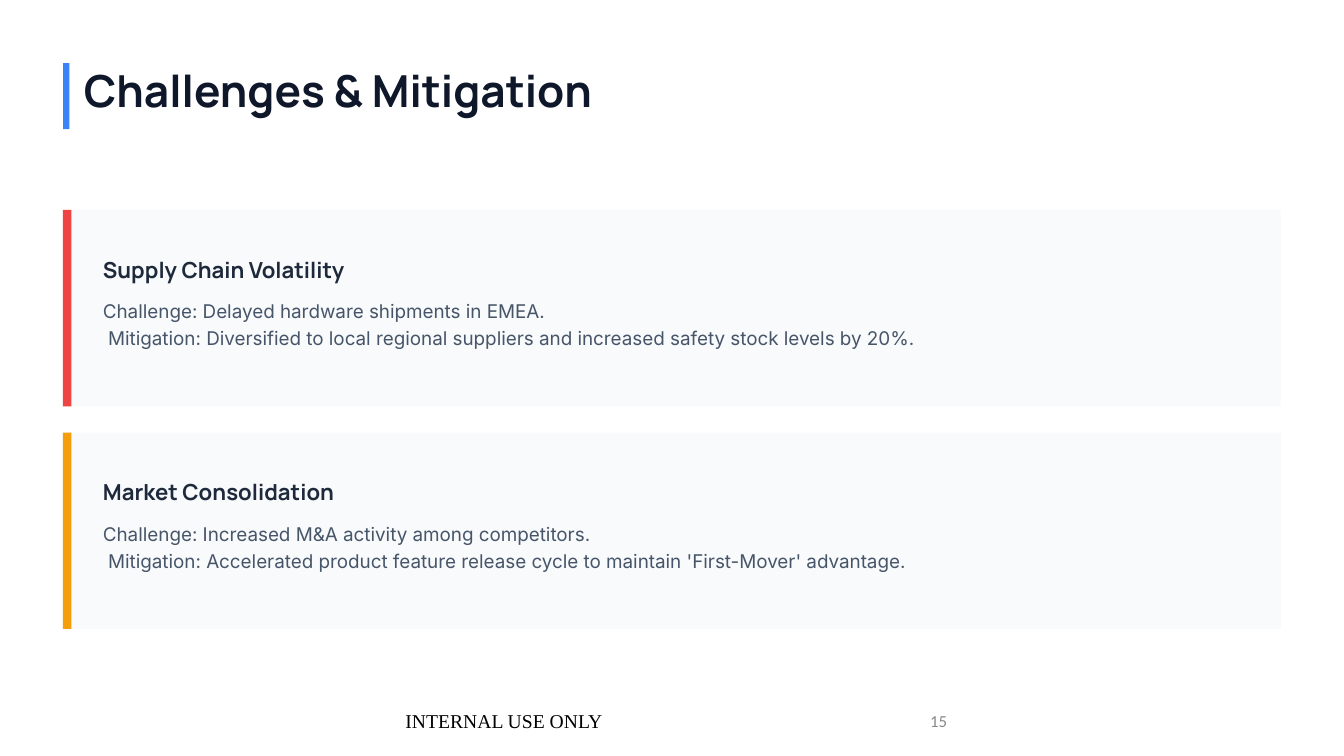
from pptx import Presentation
from pptx.dml.color import RGBColor
from pptx.enum.shapes import MSO_SHAPE
from pptx.enum.text import MSO_ANCHOR, MSO_AUTO_SIZE, PP_ALIGN
from pptx.util import Emu, Pt

EMU_PER_PX = 9525

WHITE = RGBColor(0xFF, 0xFF, 0xFF)
BLACK = RGBColor(0x00, 0x00, 0x00)
NAVY = RGBColor(0x0F, 0x17, 0x2A)
HEADING = RGBColor(0x1E, 0x29, 0x3B)
BODY = RGBColor(0x47, 0x55, 0x69)
GREY = RGBColor(0x88, 0x88, 0x88)
PANEL = RGBColor(0xF8, 0xFA, 0xFC)
BLUE = RGBColor(0x3B, 0x82, 0xF6)
RED = RGBColor(0xEF, 0x44, 0x44)
AMBER = RGBColor(0xF5, 0x9E, 0x0B)

MARGIN = 60
CARD_TOP, CARD_WIDTH, CARD_HEIGHT, CARD_PITCH = 200, 1160, 187, 212

RISKS = [
    (RED, "Supply Chain Volatility",
     "Challenge: Delayed hardware shipments in EMEA.",
     "Mitigation: Diversified to local regional suppliers and "
     "increased safety stock levels by 20%."),
    (AMBER, "Market Consolidation",
     "Challenge: Increased M&A activity among competitors.",
     "Mitigation: Accelerated product feature release cycle to "
     "maintain 'First-Mover' advantage."),
]


def px(length):
    """Convert pixels to EMU."""
    return Emu(length * EMU_PER_PX)


class SlideBuilder:
    """Draws the elements of one slide in a shared style."""

    heading_font = "Manrope"
    body_font = "Inter"

    def __init__(self, slide):
        """Keep the slide and give it a white background."""
        self.slide = slide
        slide.background.fill.solid()
        slide.background.fill.fore_color.rgb = WHITE

    def bar(self, left, top, width, height, color):
        """Draw a plain filled rectangle."""
        rectangle = self.slide.shapes.add_shape(
            MSO_SHAPE.RECTANGLE, px(left), px(top), px(width), px(height))
        rectangle.shadow.inherit = False
        rectangle.fill.solid()
        rectangle.fill.fore_color.rgb = color
        rectangle.line.fill.background()

    def text(self, left, top, width, height, words, font, size, color,
             bold=False, spacing=None):
        """Write one paragraph in a box without insets and return its frame."""
        frame = self.slide.shapes.add_textbox(
            px(left), px(top), px(width), px(height)).text_frame
        frame.word_wrap = True
        frame.auto_size = MSO_AUTO_SIZE.SHAPE_TO_FIT_TEXT
        frame.margin_left = frame.margin_right = 0
        frame.margin_top = frame.margin_bottom = 0
        paragraph = frame.paragraphs[0]
        paragraph.text = words
        paragraph.line_spacing = spacing
        paragraph.font.name = font
        paragraph.font.size = Pt(size)
        paragraph.font.bold = bold
        paragraph.font.color.rgb = color
        return frame

    def title(self, words):
        """Write the slide title beside its accent bar."""
        self.text(80, MARGIN, 1029, 50, words, self.heading_font, 31.5,
                  NAVY, bold=True)
        self.bar(MARGIN, MARGIN, 6, 63, BLUE)

    def card(self, top, accent, heading, challenge, mitigation):
        """Draw a risk card with its accent, heading and two lines."""
        self.bar(MARGIN, top, CARD_WIDTH, CARD_HEIGHT, PANEL)
        self.bar(MARGIN, top, 8, CARD_HEIGHT, accent)
        self.text(98, top + 29, 1146, 40, heading, self.heading_font, 15.8,
                  HEADING, bold=True, spacing=1.6)
        self.text(98, top + 81, 1092, 52, f"{challenge} \v {mitigation}",
                  self.body_font, 13.5, BODY, spacing=1.2)

    def footer(self, left, width, words, font, size, color, alignment):
        """Write a footer item centred on the footer line."""
        frame = self.text(left, 667, width, 38, words, font, size, color)
        frame.auto_size = MSO_AUTO_SIZE.NONE
        frame.margin_left = frame.margin_right = px(10)
        frame.margin_top = frame.margin_bottom = px(5)
        frame.vertical_anchor = MSO_ANCHOR.MIDDLE
        frame.paragraphs[0].alignment = alignment


def main():
    """Build the slide and save it."""
    deck = Presentation()
    deck.slide_width, deck.slide_height = px(1280), px(720)
    builder = SlideBuilder(deck.slides.add_slide(deck.slide_layouts[6]))
    builder.title("Challenges & Mitigation")
    for index, risk in enumerate(RISKS):
        builder.card(CARD_TOP + index * CARD_PITCH, *risk)
    builder.footer(328, 304, "INTERNAL USE ONLY", "Times New Roman", 14,
                   BLACK, PP_ALIGN.CENTER)
    builder.footer(688, 224, "15", "Calibri", 12, GREY, PP_ALIGN.RIGHT)
    deck.save("out.pptx")


if __name__ == "__main__":
    main()
